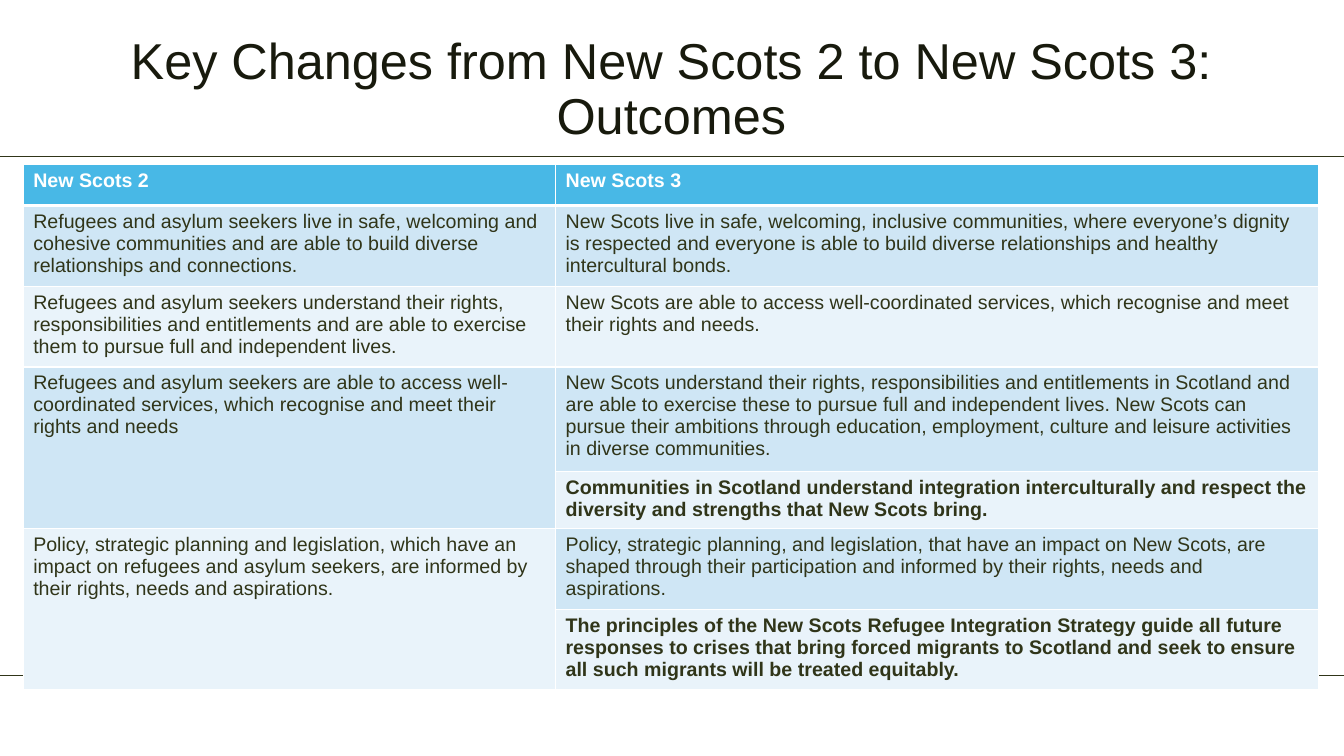
from lxml.etree import SubElement
from pptx import Presentation
from pptx.dml.color import RGBColor
from pptx.enum.shapes import MSO_CONNECTOR
from pptx.enum.text import MSO_ANCHOR, PP_ALIGN
from pptx.oxml.ns import qn
from pptx.util import Inches, Pt

TITLE = "Key Changes from New Scots 2 to New Scots 3: Outcomes"
HEADINGS = ("New Scots 2", "New Scots 3")
# New Scots 2 outcome, New Scots 3 outcome, lines of text, newly added outcome.
# None continues the New Scots 2 outcome of the row above.
OUTCOMES = [
    ("Refugees and asylum seekers live in safe, welcoming and cohesive communities "
     "and are able to build diverse relationships and connections.",
     "New Scots live in safe, welcoming, inclusive communities, where everyone’s dignity "
     "is respected and everyone is able to build diverse relationships and healthy "
     "intercultural bonds.", 3, False),
    ("Refugees and asylum seekers understand their rights, responsibilities and "
     "entitlements and are able to exercise them to pursue full and independent lives.",
     "New Scots are able to access well-coordinated services, which recognise and meet "
     "their rights and needs.", 3, False),
    ("Refugees and asylum seekers are able to access well-coordinated services, which "
     "recognise and meet their rights and needs",
     "New Scots understand their rights, responsibilities and entitlements in Scotland and "
     "are able to exercise these to pursue full and independent lives. New Scots can "
     "pursue their ambitions through education, employment, culture and leisure activities "
     "in diverse communities.", 4, False),
    (None,
     "Communities in Scotland understand integration interculturally and respect the "
     "diversity and strengths that New Scots bring.", 2, True),
    ("Policy, strategic planning and legislation, which have an impact on refugees and "
     "asylum seekers, are informed by their rights, needs and aspirations.",
     "Policy, strategic planning, and legislation, that have an impact on New Scots, are "
     "shaped through their participation and informed by their rights, needs and "
     "aspirations.", 3, False),
    (None,
     "The principles of the New Scots Refugee Integration Strategy guide all future "
     "responses to crises that bring forced migrants to Scotland and seek to ensure "
     "all such migrants will be treated equitably.", 3, True),
]

FONT = "Arial"
INK, TITLE_INK, WHITE = "303519", "181A0D", "FFFFFF"
HEADER_FILL, BANDS = "48B8E6", ("CFE6F5", "E9F3FA")
WIDTH, HEIGHT = 13.33, 7.5
RULES = (1.55, 6.7)
COLUMNS = (5.28, 7.57)
TABLE_LEFT, TABLE_TOP = 0.23, 1.63
HEADER_HEIGHT, LINE_HEIGHT, CELL_PADDING = 0.41, 0.22, 0.1


def rgb(value):
    return RGBColor.from_string(value)


def style(paragraph, size, color, bold=False):
    for run in paragraph.runs:
        run.font.name = FONT
        run.font.size = Pt(size)
        run.font.bold = bold
        run.font.color.rgb = rgb(color)


def add_rule(slide, y):
    rule = slide.shapes.add_connector(
        MSO_CONNECTOR.STRAIGHT, 0, Inches(y), Inches(WIDTH), Inches(y))
    rule.line.color.rgb = rgb(INK)
    rule.line.width = Pt(0.5)
    SubElement(rule._element.spPr, qn("a:effectLst"))


def add_title(slide):
    box = slide.shapes.add_textbox(Inches(0.48), Inches(0.27), Inches(12.36), Inches(0.63))
    frame = box.text_frame
    frame.word_wrap = True
    frame.vertical_anchor = MSO_ANCHOR.TOP
    frame.margin_top = Inches(0.09)
    frame.text = TITLE
    heading = frame.paragraphs[0]
    heading.alignment = PP_ALIGN.CENTER
    heading.line_spacing = 0.9
    style(heading, 36, TITLE_INK)


def paint_cell(cell, fill, top=1, bottom=1):
    """Give the cell white borders, with widths in points, and a fill."""
    properties = cell._tc.get_or_add_tcPr()
    for side, width in (("L", 1), ("R", 1), ("T", top), ("B", bottom)):
        border = SubElement(properties, qn(f"a:ln{side}"), w=str(Pt(width)))
        SubElement(SubElement(border, qn("a:solidFill")), qn("a:srgbClr"), val=WHITE)
    cell.fill.solid()
    cell.fill.fore_color.rgb = rgb(fill)


def write_cell(cell, text, color, bold):
    cell.text = text
    style(cell.text_frame.paragraphs[0], 14, color, bold)


def add_outcomes(slide):
    heights = [HEADER_HEIGHT] + [
        CELL_PADDING + LINE_HEIGHT * lines for _, _, lines, _ in OUTCOMES]
    table = slide.shapes.add_table(
        len(heights), len(COLUMNS), Inches(TABLE_LEFT), Inches(TABLE_TOP),
        Inches(sum(COLUMNS)), Inches(sum(heights))).table
    for column, width in zip(table.columns, COLUMNS):
        column.width = Inches(width)
    for row, height in zip(table.rows, heights):
        row.height = Inches(height)

    for col, heading in enumerate(HEADINGS):
        paint_cell(table.cell(0, col), HEADER_FILL, bottom=3)
        write_cell(table.cell(0, col), heading, WHITE, True)

    group = -1
    for row, (before, after, _, added) in enumerate(OUTCOMES, 1):
        old, new = table.cell(row, 0), table.cell(row, 1)
        group += before is not None
        top = 3 if row == 1 else 1
        paint_cell(old, BANDS[group % 2], top)
        paint_cell(new, BANDS[(row - 1) % 2], top)
        write_cell(new, after, INK, added)
        if before is None:
            table.cell(row - 1, 0).merge(old)
        else:
            write_cell(old, before, INK, False)


def main():
    deck = Presentation()
    deck.slide_width, deck.slide_height = Inches(WIDTH), Inches(HEIGHT)
    slide = deck.slides.add_slide(deck.slide_layouts[6])
    for y in RULES:
        add_rule(slide, y)
    add_title(slide)
    add_outcomes(slide)
    deck.save("out.pptx")


if __name__ == "__main__":
    main()
